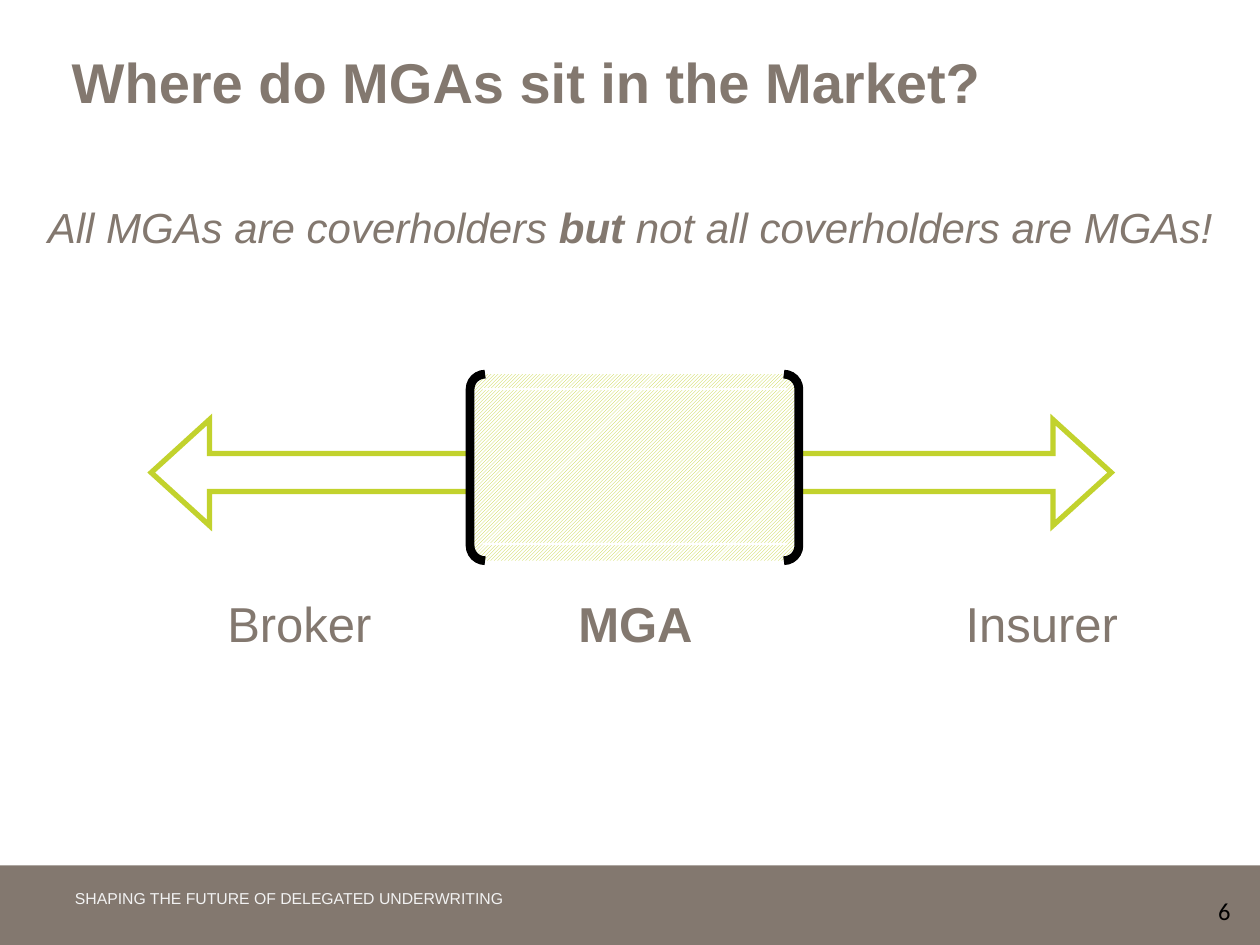
from lxml import etree
from pptx import Presentation
from pptx.dml.color import RGBColor
from pptx.enum.dml import MSO_PATTERN
from pptx.enum.shapes import MSO_SHAPE
from pptx.enum.text import MSO_ANCHOR, MSO_AUTO_SIZE, PP_ALIGN
from pptx.oxml.ns import qn
from pptx.util import Pt

RECT = MSO_SHAPE.RECTANGLE
ROUND = MSO_SHAPE.ROUNDED_RECTANGLE
ARROW = MSO_SHAPE.LEFT_RIGHT_ARROW
OPEN, CLOSE = MSO_SHAPE.LEFT_BRACKET, MSO_SHAPE.RIGHT_BRACKET
HATCH = MSO_PATTERN.LIGHT_UPWARD_DIAGONAL
TOP, LEFT, FIXED = MSO_ANCHOR.TOP, PP_ALIGN.LEFT, MSO_AUTO_SIZE.NONE
TAUPE, LIME, WHITE, BLACK = "83786F", "C2D22D", "FFFFFF", "000000"


def tint(code):
    return RGBColor.from_string(code)


class Deck:
    """Holds the text style and the current slide."""

    def __init__(self, wide, high):
        self.prs = Presentation()
        self.prs.slide_width, self.prs.slide_height = Pt(wide), Pt(high)
        self.slide = self.prs.slides.add_slide(self.prs.slide_layouts[1])
        self.style = {"name": "Arial", "size": 28, "color": TAUPE, "bold": False, "italic": False}

    def shape(self, kind, box, fill=None, line=None, width=1, adj=()):
        item = self.slide.shapes.add_shape(kind, *map(Pt, box))
        item.shadow.inherit = False
        for num, val in enumerate(adj):
            item.adjustments[num] = val
        if fill:
            item.fill.solid()
            item.fill.fore_color.rgb = tint(fill)
        else:
            item.fill.background()
        if line:
            item.line.color.rgb = tint(line)
            item.line.width = Pt(width)
            etree.SubElement(item.line._ln, qn("a:miter"), lim="800000")
        else:
            item.line.fill.background()
        return item

    def hatch(self, box, adj):
        fill = self.shape(ROUND, box, adj=adj).fill
        fill.patterned()
        fill.pattern = HATCH
        fill.fore_color.rgb, fill.back_color.rgb = tint(LIME), tint(WHITE)

    def label(self, item, runs, pad, **style):
        frame = item.text_frame
        setup = {"word_wrap": False, "auto_size": FIXED, "vertical_anchor": TOP}
        sides = ("left", "top", "right", "bottom")
        setup.update({f"margin_{side}": Pt(val) for side, val in zip(sides, pad)})
        for key, val in setup.items():
            setattr(frame, key, val)
        para = frame.paragraphs[0]
        para.alignment, para.space_before = LEFT, Pt(0)
        for words, extra in runs:
            run = para.add_run()
            run.text = words
            look = {**self.style, **style, **extra}
            run.font.color.rgb = tint(look.pop("color"))
            look["size"] = Pt(look["size"])
            for key, val in look.items():
                setattr(run.font, key, val)

    def text(self, box, runs, pad=(7.2, 3.6, 7.2, 3.6), **style):
        self.label(self.slide.shapes.add_textbox(*map(Pt, box)), runs, pad, **style)

    def holder(self, num, box, words, pad, **style):
        item = self.slide.placeholders[num]
        item.left, item.top, item.width, item.height = map(Pt, box)
        if num:
            props = item.text_frame.paragraphs[0]._p.get_or_add_pPr()
            props.set("marL", "0")
            props.set("indent", "0")
            etree.SubElement(props, qn("a:buNone"))
        self.label(item, [(words, {})], pad, **style)


def main():
    deck = Deck(720, 540)
    bar = deck.shape(RECT, (0, 494.6, 720, 45.4), TAUPE)
    deck.slide.shapes._spTree.insert(2, bar._element)
    deck.holder(0, (33.8, 23.8, 579, 46), "Where do MGAs sit in the Market?",
                (7.2, 3.6, 7.2, 3.6), size=32, bold=True)
    deck.holder(1, (33.8, 501.8, 652.4, 28), "SHAPING THE FUTURE OF DELEGATED UNDERWRITING",
                (9, 5.8, 5.8, 5.8), size=9, color="F2F2F2")

    deck.shape(ARROW, (86.4, 239.8, 548.6, 60.5), line=LIME, width=3, adj=(0.36, 0.55))
    left, top, wide, high = 268.6, 213.8, 187.9, 106.6
    curve = 8.6
    deck.hatch((left, top, wide, high), (curve / high,))
    for kind, x in ((OPEN, left), (CLOSE, left + wide - curve)):
        deck.shape(kind, (x, top, curve, high), line=BLACK, width=5, adj=(1,))
    for y in (221.8, 310.3):
        deck.shape(RECT, (275.8, y, 174.2, 1.2), WHITE)

    for x, wide, words, bold in ((129.9, 83.5, "Broker", False),
                                 (330.5, 66.2, "MGA", True),
                                 (551.8, 88.6, "Insurer", False)):
        deck.text((x, 339.1, wide, 33.8), [(words, {})], (0, 0, 0, 0), bold=bold)

    deck.text((20.2, 111.6, 680.4, 36),
              [("All MGAs are coverholders ", {}), ("but", {"bold": True}),
               (" not all coverholders are MGAs!", {})], size=24, italic=True)
    deck.text((689, 508.3, 33.8, 24.5), [("6", {})], name="Calibri", size=14, color=BLACK)
    deck.prs.save("out.pptx")


if __name__ == "__main__":
    main()
